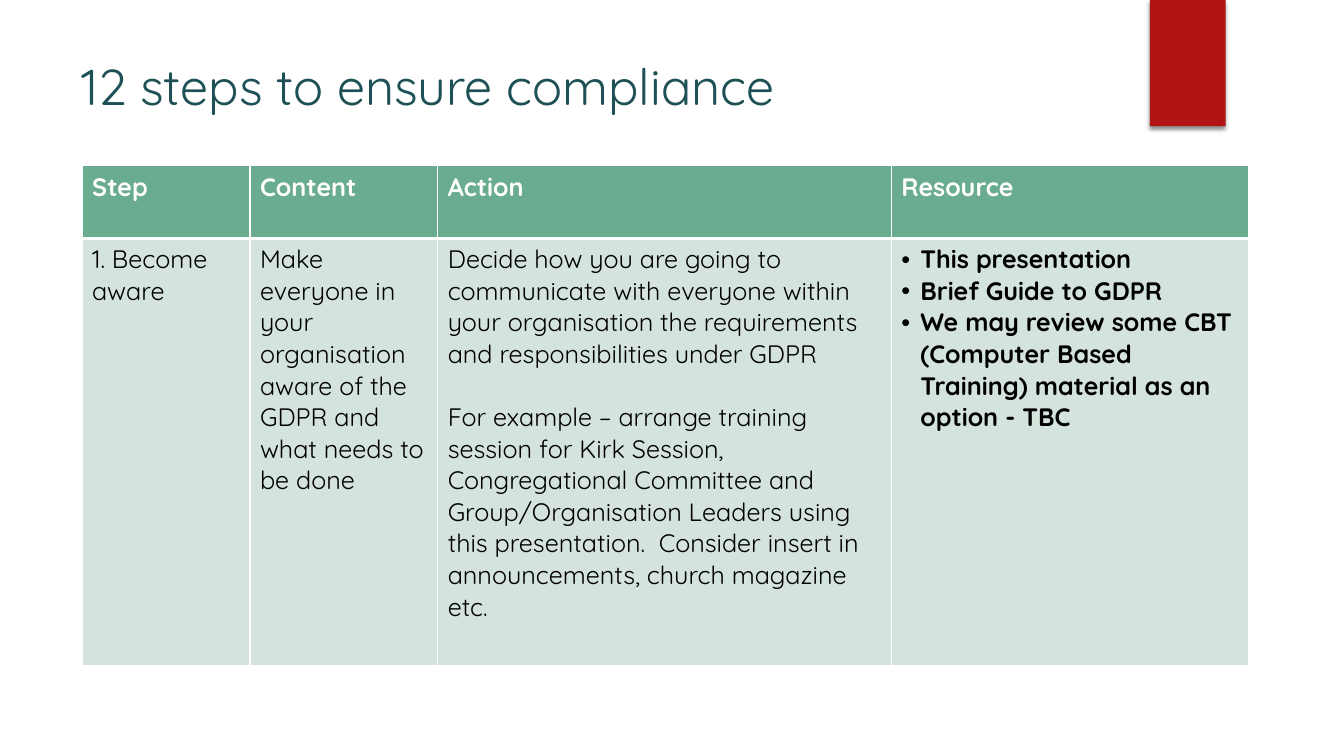
from dataclasses import dataclass

from lxml import etree
from pptx import Presentation
from pptx.dml.color import RGBColor as RGB
from pptx.enum.shapes import MSO_SHAPE as SHAPE
from pptx.enum.text import MSO_ANCHOR as ANCHOR
from pptx.oxml import parse_xml
from pptx.oxml.ns import nsdecls, qn
from pptx.util import Cm, Pt


@dataclass(frozen=True)
class Theme:
    font: str = "Quicksand"
    title: str = "1E5155"
    ribbon: str = "B01513"
    header: str = "6AAC90"
    body: str = "D4E3DB"
    white: str = "FFFFFF"
    black: str = "000000"
    title_size: int = 36
    text_size: int = 18


theme = Theme()


def add_run(p, text, size, color, bold=False):
    r = p.add_run()
    r.text = text
    r.font.name = theme.font
    r.font.size = Pt(size)
    r.font.bold = bold
    r.font.color.rgb = RGB.from_string(color)


def add_border(tcPr, side, points):
    ln = etree.SubElement(tcPr, qn(f"a:ln{side}"), w=str(Pt(points)))
    fill = etree.SubElement(ln, qn("a:solidFill"))
    etree.SubElement(fill, qn("a:srgbClr"), val=theme.white)


prs = Presentation()
prs.slide_width, prs.slide_height = Cm(33.87), Cm(19.05)
s = prs.slides.add_slide(prs.slide_layouts[6])

# Red ribbon with a soft shadow below
ribbon = s.shapes.add_shape(SHAPE.RECTANGLE, Cm(28.98), Cm(0), Cm(1.91), Cm(3.18))
ribbon.fill.solid()
ribbon.fill.fore_color.rgb = RGB.from_string(theme.ribbon)
ribbon.line.fill.background()
ribbon._element.spPr.append(parse_xml(
    f'<a:effectLst {nsdecls("a")}>'
    f'<a:outerShdw blurRad="{Pt(3)}" dist="{Pt(2)}" dir="5400000" rotWithShape="0">'
    f'<a:srgbClr val="{theme.black}"><a:alpha val="45000"/></a:srgbClr>'
    '</a:outerShdw></a:effectLst>'))

# Title
title = s.shapes.add_textbox(Cm(1.8), Cm(1.27), Cm(26.14), Cm(2.54))
tf = title.text_frame
tf.word_wrap = True
tf.vertical_anchor = ANCHOR.TOP
add_run(tf.paragraphs[0], "12 steps to ensure compliance", theme.title_size, theme.title)

# Table content: each cell is a list of paragraphs
rows = [
    [["Step"], ["Content"], ["Action"], ["Resource"]],
    [
        ["1. Become aware"],
        ["Make everyone in your organisation aware of the GDPR and what needs to be done"],
        ["Decide how you are going to communicate with everyone within your organisation "
         "the requirements and responsibilities under GDPR",
         "For example – arrange training session for Kirk Session, Congregational Committee "
         "and Group/Organisation Leaders using this presentation.  Consider insert in "
         "announcements, church magazine etc."],
        ["This presentation",
         "Brief Guide to GDPR",
         "We may review some CBT (Computer Based Training) material as an option - TBC"],
    ],
]
col_widths = [4.23, 4.73, 11.43, 9]
row_heights = [1.83, 10.75]

# Table grid
frame = s.shapes.add_table(len(rows), len(col_widths), Cm(2.07), Cm(4.18),
                           Cm(sum(col_widths)), Cm(sum(row_heights)))
table = frame.table
table.horz_banding = False
for col, width in zip(table.columns, col_widths):
    col.width = Cm(width)
for row, height in zip(table.rows, row_heights):
    row.height = Cm(height)

# Table cells
for i, row in enumerate(rows):
    is_header = i == 0
    for j, texts in enumerate(row):
        cell = table.cell(i, j)
        is_list = not is_header and j == len(row) - 1
        tcPr = cell._tc.get_or_add_tcPr()
        for side in "LRTB":
            between_rows = side == ("B" if is_header else "T")
            add_border(tcPr, side, 3 if between_rows else 1)
        cell.fill.solid()
        cell.fill.fore_color.rgb = RGB.from_string(theme.header if is_header else theme.body)

        for k, text in enumerate(texts):
            p = cell.text_frame.paragraphs[0] if k == 0 else cell.text_frame.add_paragraph()
            if is_list:
                pPr = p._p.get_or_add_pPr()
                pPr.set("marL", str(Cm(0.48)))
                pPr.set("indent", str(Cm(-0.48)))
                etree.SubElement(pPr, qn("a:buFont"), typeface="Arial")
                etree.SubElement(pPr, qn("a:buChar"), char="•")
            elif k > 0:
                p.space_before = Pt(22.5)
            add_run(p, text, theme.text_size, theme.white if is_header else theme.black,
                    bold=is_header or is_list)

prs.save("out.pptx")
